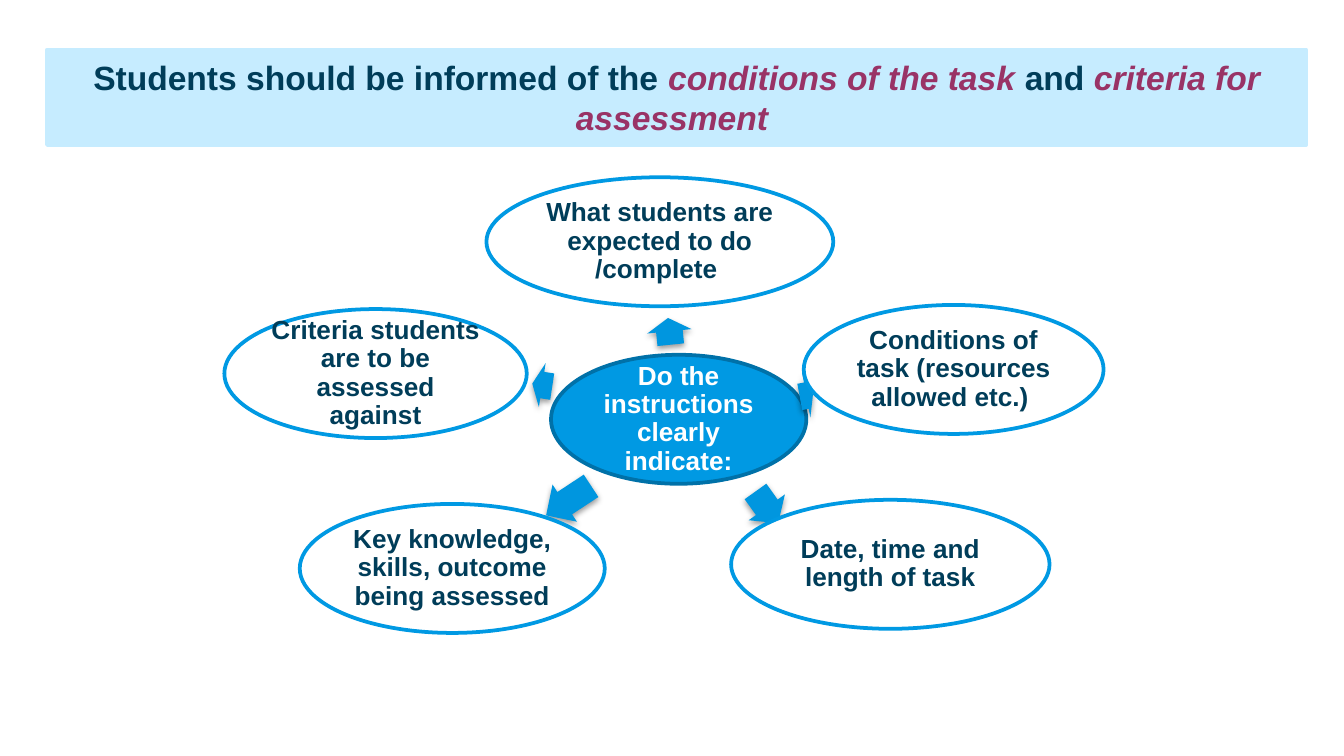
from lxml.etree import SubElement
from pptx import Presentation
from pptx.dml.color import RGBColor
from pptx.enum.shapes import MSO_SHAPE
from pptx.enum.text import MSO_ANCHOR, PP_ALIGN
from pptx.oxml.ns import qn
from pptx.util import Pt

TITLE = [
    ("Students should be informed of the ", "plain"),
    ("conditions of the task ", "stress"),
    ("and ", "plain"),
    ("criteria for assessment ", "stress"),
]
HUB = ("Do the instructions clearly indicate:", (295.2, 190.1, 136.8))
NODES = [
    ("What students are expected to do /complete ", (260.6, 95, 185.8),
     (358.6, 177.5, 14.4, 264.2)),
    ("Conditions of task (resources allowed etc.) ", (430.6, 163.4, 160.6),
     (432, 212, 7.2, 349.6)),
    ("Date, time and length of task", (391.7, 267.8, 170.6),
     (410.8, 271.8, 20.9, 54.5)),
    ("Key knowledge, skills, outcome being assessed", (160.6, 270, 163.4),
     (304.6, 268.2, 28.8, 146.7)),
    ("Criteria students are to be assessed against", (120.2, 165.6, 162),
     (290.5, 206.3, 10.8, 188.7)),
]
THEME = {
    "ink": "003D59", "stress": "993366", "white": "FFFFFF", "pale": "C6ECFF",
    "blue": "0099E3", "edge": "0071A8", "arrow": "0096DF", "black": "000000",
    "font": "Arial", "head": 18, "body": 14, "line": 2,
}
OVAL_H, ARROW_H = 69.1, 23.8
FRAME = {
    "word_wrap": True, "vertical_anchor": MSO_ANCHOR.MIDDLE,
    "margin_left": Pt(1.4), "margin_right": Pt(1.4),
    "margin_top": Pt(1.4), "margin_bottom": Pt(1.4),
}
PARA = {"alignment": PP_ALIGN.CENTER, "line_spacing": 0.9, "space_after": Pt(4.9)}
FONT = {"name": THEME["font"], "bold": True}


def apply(item, form):
    for key, value in form.items():
        setattr(item, key, value)


def tint(name):
    return RGBColor.from_string(THEME[name])


def draw(slide, kind, box, fill, edge=None):
    shape = slide.shapes.add_shape(kind, *map(Pt, box))
    shape.shadow.inherit = False
    shape.fill.solid()
    shape.fill.fore_color.rgb = tint(fill)
    if edge:
        shape.line.color.rgb = tint(edge)
        shape.line.width = Pt(THEME["line"])
    else:
        shape.line.fill.background()
    return shape


def write(para, text, size, ink, slant=False):
    run = para.add_run()
    run.text = text
    apply(run.font, {**FONT, "size": Pt(THEME[size]), "italic": slant})
    run.font.color.rgb = tint(ink)


def oval(slide, text, place, fill, edge, ink):
    shape = draw(slide, MSO_SHAPE.OVAL, (*place, OVAL_H), fill, edge)
    frame = shape.text_frame
    apply(frame, FRAME)
    apply(frame.paragraphs[0], PARA)
    write(frame.paragraphs[0], text, "body", ink)


def arrow(slide, mid_x, mid_y, width, turn):
    box = (mid_x - width / 2, mid_y - ARROW_H / 2, width, ARROW_H)
    shape = draw(slide, MSO_SHAPE.RIGHT_ARROW, box, "arrow")
    shape.rotation = turn
    shape.adjustments[0] = 0.6
    shape.adjustments[1] = 0.5
    glow = shape._element.spPr.find(qn("a:effectLst"))
    shade = SubElement(glow, qn("a:outerShdw"), blurRad=str(Pt(3.1)),
                       dist=str(Pt(1.6)), dir="5400000", rotWithShape="0")
    color = SubElement(shade, qn("a:srgbClr"), val=THEME["black"])
    SubElement(color, qn("a:alpha"), val="38000")


def title(slide):
    shape = draw(slide, MSO_SHAPE.RECTANGLE, (25.2, 26.6, 674.6, 51.1), "pale", "pale")
    frame = shape.text_frame
    frame.word_wrap = True
    para = frame.paragraphs[0]
    para.alignment = PP_ALIGN.CENTER
    for text, style in TITLE:
        slant = style == "stress"
        write(para, text, "head", "stress" if slant else "ink", slant)


def main():
    deck = Presentation()
    apply(deck, {"slide_width": Pt(720), "slide_height": Pt(405)})
    slide = deck.slides.add_slide(deck.slide_layouts[6])
    oval(slide, *HUB, "blue", "edge", "white")
    for text, place, point in NODES:
        arrow(slide, *point)
        oval(slide, text, place, "white", "blue", "ink")
    title(slide)
    deck.save("out.pptx")


if __name__ == "__main__":
    main()
